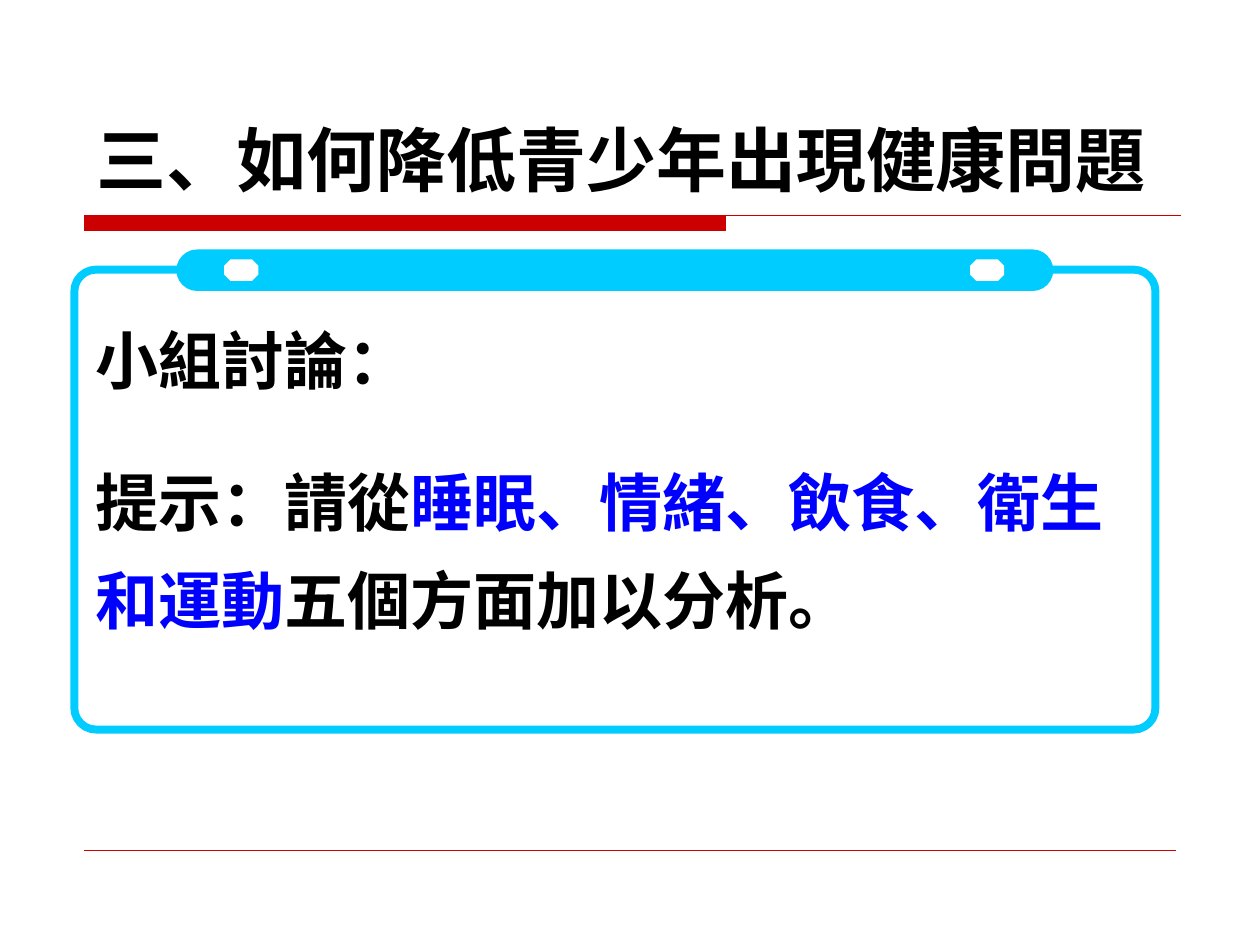
import pptx
import pptx.util
import pptx.dml.color
import pptx.enum.shapes
import pptx.oxml.ns
from lxml import etree

RGB = pptx.dml.color.RGBColor
RED = RGB(0xCC, 0x00, 0x00)
CYAN = RGB(0x00, 0xCC, 0xFF)
BLUE = RGB(0x00, 0x00, 0xFF)
BLACK = RGB(0x00, 0x00, 0x00)
WHITE = RGB(0xFF, 0xFF, 0xFF)

SHAPE = pptx.enum.shapes.MSO_SHAPE
qn = pptx.oxml.ns.qn
Inches = pptx.util.Inches
Pt = pptx.util.Pt

WIDTH, HEIGHT = 10, 7.5
LEFT = 0.067 * WIDTH
RULE_Y = 1.71


def add_shape(s, kind, box, adj, fill=None, line=None, weight=0):
    sp = s.shapes.add_shape(kind, *map(Inches, box))
    sp.shadow.inherit = False
    sp.adjustments[0] = adj
    if fill is None:
        sp.fill.background()
    else:
        sp.fill.solid()
        sp.fill.fore_color.rgb = fill
    if line is None:
        sp.line.fill.background()
    else:
        sp.line.color.rgb = line
        sp.line.width = Pt(weight)
    return sp


def add_rule(s, y, right, weight):
    c = s.shapes.add_connector(
        pptx.enum.shapes.MSO_CONNECTOR.STRAIGHT,
        Inches(LEFT), Inches(y), Inches(right), Inches(y))
    c.line.color.rgb = RED
    c.line.width = Pt(weight)
    etree.SubElement(c._element.spPr, qn("a:effectLst"))


def add_title_bar(s):
    fb = s.shapes.build_freeform(Inches(LEFT), Inches(RULE_Y))
    right, bottom = Inches(5.76), Inches(RULE_Y + 0.12)
    fb.add_line_segments([(right, Inches(RULE_Y)), (right, bottom),
                          (Inches(LEFT), bottom)], close=True)
    sp = fb.convert_to_shape()
    sp.shadow.inherit = False
    sp.fill.solid()
    sp.fill.fore_color.rgb = RED
    sp.line.fill.background()
    add_rule(s, RULE_Y, 9.37, 0.75)


def add_text(s, box, paragraphs, size, font, gap=0):
    """Write paragraphs, each a list of (text, colour) runs, gap points apart."""
    tf = s.shapes.add_textbox(*map(Inches, box)).text_frame
    tf.word_wrap = True
    for i, runs in enumerate(paragraphs):
        p = tf.add_paragraph() if i else tf.paragraphs[0]
        p.line_spacing = 1.3
        p.space_before = Pt(gap if i else 0)
        for text, color in runs:
            r = p.add_run()
            r.text = text
            r.font.size = Pt(size)
            r.font.bold = True
            r.font.color.rgb = color
            r.font.name = font
            etree.SubElement(r.font._element, qn("a:ea"), typeface=font)


def add_clipboard(s):
    add_shape(s, SHAPE.ROUNDED_RECTANGLE, (0.59, 2.14, 8.58, 3.65), 0.047,
              line=CYAN, weight=4.5)
    add_shape(s, SHAPE.ROUNDED_RECTANGLE, (1.4, 1.98, 6.96, 0.33), 0.5, fill=CYAN)
    for x in (1.78, 7.7):
        add_shape(s, SHAPE.OCTAGON, (x, 2.06, 0.27, 0.17), 0.29, fill=WHITE)


def main():
    prs = pptx.Presentation()
    prs.slide_width, prs.slide_height = Inches(WIDTH), Inches(HEIGHT)
    s = prs.slides.add_slide(prs.slide_layouts[6])
    add_title_bar(s)
    add_rule(s, 0.9 * HEIGHT, WIDTH - LEFT, 0.25)
    add_clipboard(s)
    add_text(s, (0.66, 2.32, 8.44, 2.74), [
        [("小組討論：", BLACK)],
        [("提示：請從", BLACK), ("睡眠、情緒、飲食、衛生和運動", BLUE),
         ("五個方面加以分析。", BLACK)],
    ], size=36, font="Comic Neue", gap=25)
    add_text(s, (LEFT, 0.68, 8.98, 0.87),
             [[("三、如何降低青少年出現健康問題", BLACK)]],
             size=40, font="DejaVu Sans")
    prs.save("out.pptx")


if __name__ == "__main__":
    main()
